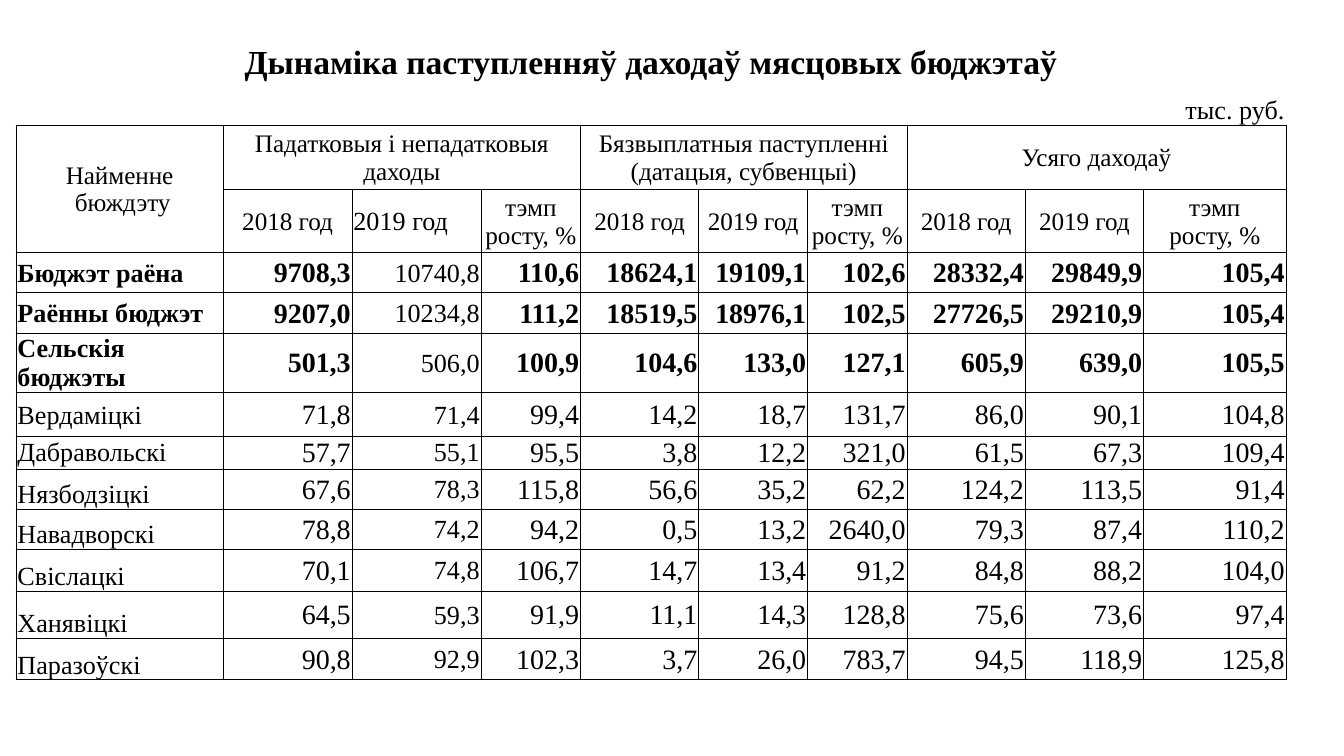
from dataclasses import dataclass

from lxml import etree
from pptx import Presentation
from pptx.dml.color import RGBColor
from pptx.enum.text import MSO_ANCHOR, PP_ALIGN
from pptx.oxml.ns import qn
from pptx.util import Inches, Pt

LEFT, MID, RIGHT = PP_ALIGN.LEFT, PP_ALIGN.CENTER, PP_ALIGN.RIGHT
TOP, CENTRE, BASE = MSO_ANCHOR.TOP, MSO_ANCHOR.MIDDLE, MSO_ANCHOR.BOTTOM
NO_GRID = "{2D5ABB26-0587-4C30-8999-92F81FD0307C}"
WIDE = 10
HIGH = WIDE * 9 / 16


@dataclass(frozen=True)
class Theme:
    font: str = "Times New Roman"
    ink: str = "000000"
    title: float = 18
    head: float = 13.5
    label: float = 14
    value: float = 15
    rule: float = 0.5


@dataclass(frozen=True)
class Budget:
    name: str
    values: str
    high: float = 0.3
    bold: bool = False
    name_at: MSO_ANCHOR = BASE
    value_at: MSO_ANCHOR = CENTRE


@dataclass(frozen=True)
class Style:
    size: float
    align: PP_ALIGN = MID
    anchor: MSO_ANCHOR = CENTRE
    bold: bool = False


THEME = Theme()
WIDTHS = [1.54, 0.96, 0.82, 0.14, 0.74, 0.88, 0.2,
          0.61, 0.74, 0.88, 0.28, 0.6, 0.23, 0.83]
TOPS = [0.32, 0.32, 0.48, 0.47]  # title, unit and two header rows
FIRST = 4
# First grid column and span of each visible column
SLOTS = [(0, 1), (1, 1), (2, 2), (4, 1), (5, 1),
         (6, 2), (8, 1), (9, 1), (10, 2), (12, 2)]
GROUPS = [(1, 4, "Падатковыя і непадатковыя даходы"),
          (5, 4, "Бязвыплатныя паступленні (датацыя, субвенцыі)"),
          (9, 5, "Усяго даходаў")]
HEADS = ["2018 год", "2019 год", "тэмп\nросту, %"] * 3
BUDGETS = [
    Budget("Бюджэт раёна", "9708,3 10740,8 110,6 18624,1 19109,1 102,6 28332,4 29849,9 105,4",
           bold=True, name_at=CENTRE),
    Budget("Раённы бюджэт", "9207,0 10234,8 111,2 18519,5 18976,1 102,5 27726,5 29210,9 105,4",
           bold=True, name_at=CENTRE),
    Budget("Сельскія бюджэты", "501,3 506,0 100,9 104,6 133,0 127,1 605,9 639,0 105,5",
           0.44, bold=True, name_at=CENTRE),
    Budget("Вердаміцкі", "71,8 71,4 99,4 14,2 18,7 131,7 86,0 90,1 104,8", 0.33, name_at=CENTRE),
    Budget("Дабравольскі", "57,7 55,1 95,5 3,8 12,2 321,0 61,5 67,3 109,4",
           0.24, name_at=TOP, value_at=TOP),
    Budget("Нязбодзіцкі", "67,6 78,3 115,8 56,6 35,2 62,2 124,2 113,5 91,4"),
    Budget("Навадворскі", "78,8 74,2 94,2 0,5 13,2 2640,0 79,3 87,4 110,2"),
    Budget("Свіслацкі", "70,1 74,8 106,7 14,7 13,4 91,2 84,8 88,2 104,0", 0.31),
    Budget("Ханявіцкі", "64,5 59,3 91,9 11,1 14,3 128,8 75,6 73,6 97,4", 0.35),
    Budget("Паразоўскі", "90,8 92,9 102,3 3,7 26,0 783,7 94,5 118,9 125,8", 0.31),
]


def rule(cell, sides: str) -> None:
    """Draw thin rules on the given sides of a cell."""
    props = cell._tc.get_or_add_tcPr()
    for side in sides:
        line = etree.SubElement(props, qn(f"a:ln{side}"), w=str(Pt(THEME.rule)))
        fill = etree.SubElement(line, qn("a:solidFill"))
        etree.SubElement(fill, qn("a:srgbClr"), val=THEME.ink)


def join(grid, row: int, col: int, wide: int, high: int = 1) -> None:
    if wide * high > 1:
        grid.cell(row, col).merge(grid.cell(row + high - 1, col + wide - 1))


def write(grid, row: int, col: int, text: str, style: Style) -> None:
    cell = grid.cell(row, col)
    cell.vertical_anchor = style.anchor
    cell.text_frame.text = text
    for para in cell.text_frame.paragraphs:
        para.alignment = style.align
        for run in para.runs:
            font = run.font
            font.name, font.size, font.bold = THEME.font, Pt(style.size), style.bold
            font.color.rgb = RGBColor.from_string(THEME.ink)


def make_grid(slide):
    """Add the bare table with its sizes, margins and rules."""
    highs = TOPS + [item.high for item in BUDGETS]
    grid = slide.shapes.add_table(
        len(highs), len(WIDTHS), Inches(0.12), Inches(0.29),
        Inches(sum(WIDTHS)), Inches(sum(highs))).table
    grid.first_row = grid.horz_banding = False
    grid._tbl.tblPr.find(qn("a:tableStyleId")).text = NO_GRID
    for col, wide in zip(grid.columns, WIDTHS):
        col.width = Inches(wide)
    for num, (row, high) in enumerate(zip(grid.rows, highs)):
        row.height = Inches(high)
        for cell in row.cells:
            cell.margin_left = cell.margin_right = cell.margin_top = Inches(0.01)
            cell.margin_bottom = 0
            rule(cell, ("", "B")[num] if num < 2 else "LRTB")
            cell.fill.background()
    return grid


def fill_head(grid) -> None:
    """Write the title, the unit and the two header rows."""
    join(grid, 0, 0, len(WIDTHS))
    write(grid, 0, 0, "Дынаміка паступленняў даходаў мясцовых бюджэтаў",
          Style(THEME.title, anchor=BASE, bold=True))
    for col, wide in [(1, 2), (3, 4), (7, 2), (9, 2), (11, 2)]:
        join(grid, 1, col, wide)
    write(grid, 1, len(WIDTHS) - 1, "тыс. руб.", Style(THEME.label, RIGHT, BASE))

    head = Style(THEME.head)
    join(grid, 2, 0, 1, 2)
    write(grid, 2, 0, "Найменне\n бюждэту", head)
    for col, wide, text in GROUPS:
        join(grid, 2, col, wide)
        write(grid, 2, col, text, head)
    for (col, wide), text in zip(SLOTS[1:], HEADS):
        join(grid, 3, col, wide)
        write(grid, 3, col, text, Style(THEME.label, LEFT) if col == 2 else head)


def fill_row(grid, row: int, item: Budget) -> None:
    """Write one budget; the 2019 tax column is smaller and never bold."""
    write(grid, row, 0, item.name, Style(THEME.label, LEFT, item.name_at, item.bold))
    for (col, wide), text in zip(SLOTS[1:], item.values.split()):
        plain = col == 2
        size = THEME.label if plain else THEME.value
        join(grid, row, col, wide)
        write(grid, row, col, text,
              Style(size, RIGHT, item.value_at, item.bold and not plain))


def main() -> None:
    deck = Presentation()
    deck.slide_width, deck.slide_height = Inches(WIDE), Inches(HIGH)
    slide = deck.slides.add_slide(deck.slide_layouts[6])
    grid = make_grid(slide)
    fill_head(grid)
    for row, item in enumerate(BUDGETS, FIRST):
        fill_row(grid, row, item)
    deck.save("out.pptx")


if __name__ == "__main__":
    main()
